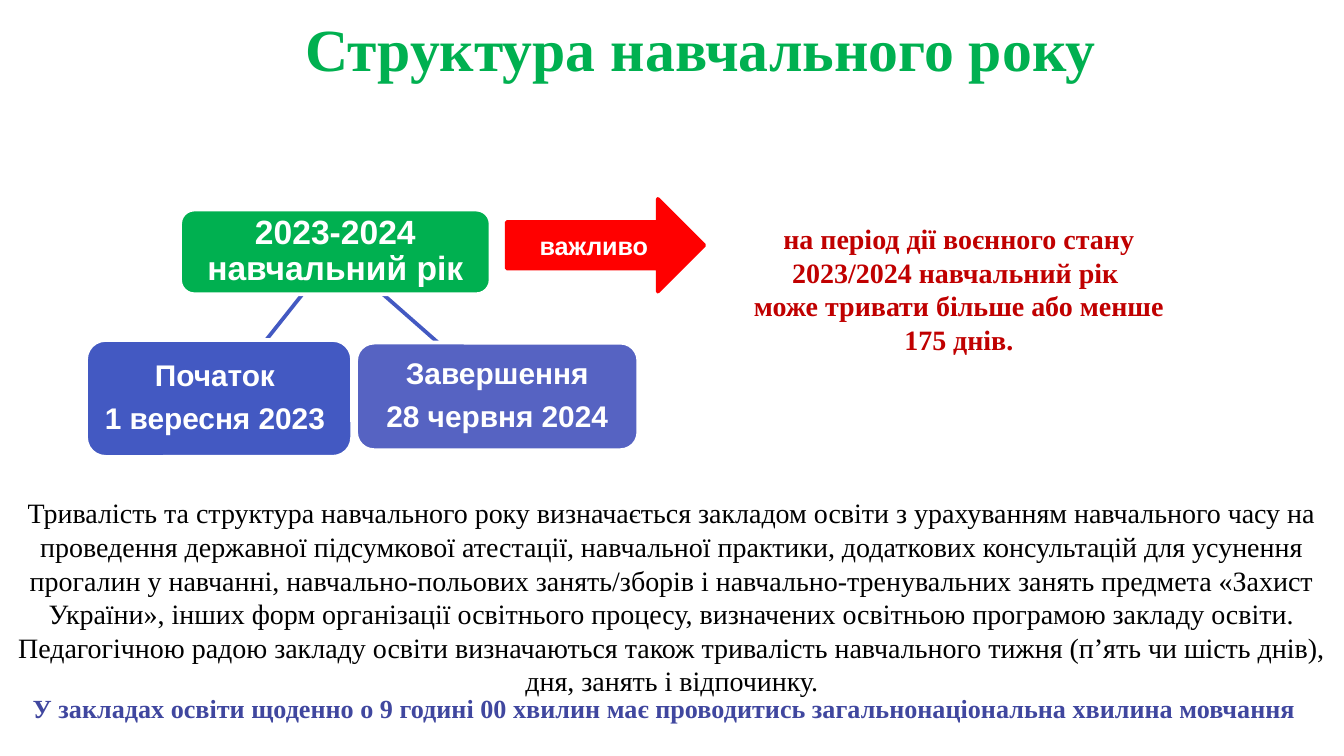
import pptx
import pptx.util
import pptx.dml.color
import pptx.enum.shapes
import pptx.enum.text
import pptx.oxml

Inches, Pt = pptx.util.Inches, pptx.util.Pt
Shape = pptx.enum.shapes.MSO_SHAPE
Anchor = pptx.enum.text.MSO_ANCHOR
Align = pptx.enum.text.PP_ALIGN
Fit = pptx.enum.text.MSO_AUTO_SIZE
SERIF = "Times New Roman"


def paint(target, color):
    """Give a fill or a font a solid colour."""
    if hasattr(target, "solid"):
        target.solid()
        target.fore_color.rgb = pptx.dml.color.RGBColor.from_string(color)
    else:
        target.color.rgb = pptx.dml.color.RGBColor.from_string(color)


def write(frame, lines, size, face, color, bold=True, align=Align.CENTER):
    """Fill a text frame with paragraphs in one font."""
    frame.text = "\n".join(lines)
    frame.word_wrap = True
    for para in frame.paragraphs:
        para.alignment = align
        para.font.size = Pt(size)
        para.font.name = face
        para.font.bold = bold
        paint(para.font, color)


deck = pptx.Presentation()
deck.slide_width, deck.slide_height = Inches(10), Inches(10 * 9 / 16)
slide = deck.slides.add_slide(deck.slide_layouts[5])
shapes = slide.shapes

# Title
title = shapes.title
title.left, title.top = Inches(2.17), Inches(0.04)
title.width, title.height = Inches(6.18), Inches(0.64)
write(title.text_frame, ["Структура навчального року"], 32, SERIF, "00B050",
      align=Align.LEFT)
title.text_frame.vertical_anchor = Anchor.TOP

# Branches from the school year to its start and end
for x1, y1, x2, y2 in [(2.85, 2.19, 3.26, 2.55), (2.25, 2.19, 1.98, 2.53)]:
    branch = shapes.add_connector(
        pptx.enum.shapes.MSO_CONNECTOR.STRAIGHT,
        Inches(x1), Inches(y1), Inches(x2), Inches(y2))
    paint(branch.line.fill, "4359C2")
    branch.line.width = Pt(2)
    branch._element.spPr.append(pptx.oxml.parse_xml(
        '<a:effectLst xmlns:a='
        '"http://schemas.openxmlformats.org/drawingml/2006/main"/>'))

# School year, end, start and the arrow to the note
blocks = [
    (Shape.ROUNDED_RECTANGLE, 1.34, 1.56, 2.31, 0.63, "00B050", "FFFFFF", 18,
     ["2023-2024 навчальний рік"]),
    (Shape.ROUNDED_RECTANGLE, 2.65, 2.55, 2.1, 0.8, "5663C2", "FFFFFF", 16,
     ["Завершення", "28 червня 2024"]),
    (Shape.ROUNDED_RECTANGLE, 0.64, 2.53, 1.98, 0.87, "4359C2", "FFFFFF", 16,
     ["Початок ", "1 вересня 2023 "]),
    (Shape.RIGHT_ARROW, 3.77, 1.48, 1.47, 0.69, "FF0000", "FF0000", 13.5,
     ["важливо"]),
]
for kind, x, y, w, h, fill, edge, size, lines in blocks:
    block = shapes.add_shape(kind, Inches(x), Inches(y), Inches(w), Inches(h))
    block.shadow.inherit = False
    paint(block.fill, fill)
    paint(block.line.fill, edge)
    block.line.width = Pt(2)
    frame = block.text_frame
    write(frame, lines, size, "Arial", "FFFFFF")
    frame.vertical_anchor = Anchor.MIDDLE
    if kind == Shape.ROUNDED_RECTANGLE:
        frame.margin_left = frame.margin_right = Inches(0.08)
        frame.margin_top = frame.margin_bottom = Inches(0.08)
        for para in frame.paragraphs:
            para.line_spacing = 0.9
            para.space_after = Pt(size * 0.35)

# Note and rules
notes = [
    (5.5, 1.6, 3.27, 1.36, 15, "C00000", True,
     ["на період дії воєнного стану 2023/2024 навчальний рік ",
      "може тривати більше або менше 175 днів."]),
    (0, 3.64, 10, 1.62, 15, "000000", False,
     ["Тривалість та структура навчального року визначається закладом освіти "
      "з урахуванням навчального часу на проведення державної підсумкової "
      "атестації, навчальної практики, додаткових консультацій для усунення "
      "прогалин у навчанні, навчально-польових занять/зборів і "
      "навчально-тренувальних занять предмета «Захист України», інших форм "
      "організації освітнього процесу, визначених освітньою програмою "
      "закладу освіти.",
      "Педагогічною радою закладу освіти визначаються також тривалість "
      "навчального тижня (п’ять чи шість днів), дня, занять і відпочинку."]),
    (-0.03, 5.1, 10, 0.34, 14, "40479F", True,
     ["У закладах освіти щоденно о 9 годині 00 хвилин має проводитись "
      "загальнонаціональна хвилина мовчання "]),
]
for x, y, w, h, size, color, bold, lines in notes:
    note = shapes.add_textbox(Inches(x), Inches(y), Inches(w), Inches(h))
    write(note.text_frame, lines, size, SERIF, color, bold)
    note.text_frame.auto_size = Fit.SHAPE_TO_FIT_TEXT

deck.save("out.pptx")
